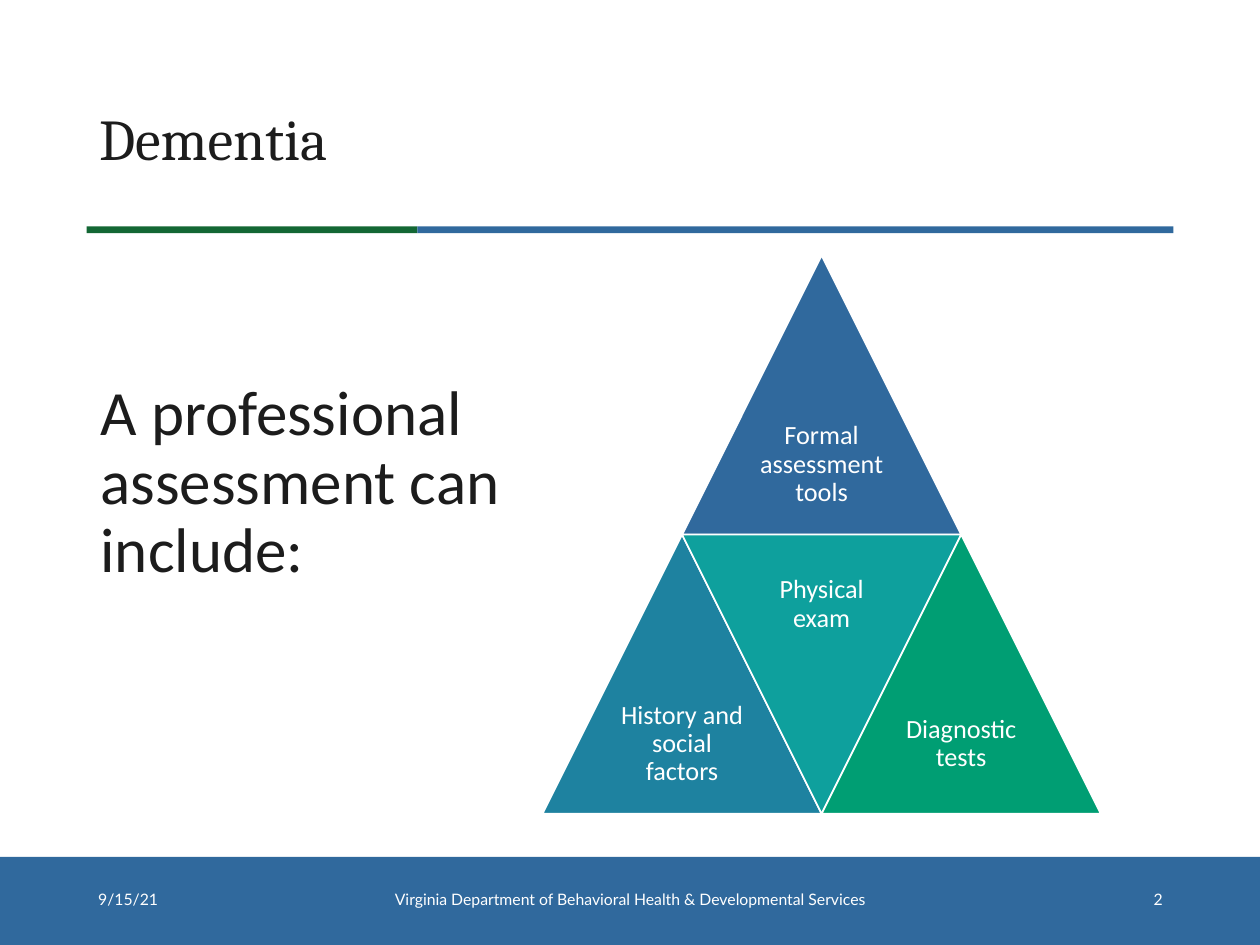
"""Builds a slide on what a professional dementia assessment can include."""
from pptx import Presentation
from pptx.dml.color import RGBColor
from pptx.enum.shapes import MSO_SHAPE
from pptx.enum.text import MSO_ANCHOR, PP_ALIGN
from pptx.util import Pt


def add_block(kind, left, top, width, height, color):
    block = page.shapes.add_shape(kind, Pt(left), Pt(top), Pt(width), Pt(height))
    block.shadow.inherit = False
    block.fill.solid()
    block.fill.fore_color.rgb = RGBColor.from_string(color)
    block.line.fill.background()
    return block


def write_text(box, text, size, font, color, align=PP_ALIGN.LEFT, anchor=MSO_ANCHOR.MIDDLE):
    frame = box.text_frame
    frame.word_wrap = True
    frame.vertical_anchor = anchor
    frame.text = text
    paragraph = frame.paragraphs[0]
    paragraph.alignment = align
    paragraph.line_spacing = 0.9
    span = paragraph.runs[0]
    span.font.size = Pt(size)
    span.font.name = font
    span.font.color.rgb = RGBColor.from_string(color)


WHITE, INK, BLUE, GREEN = "FFFFFF", "1C1C1C", "30699D", "136734"

deck = Presentation()
deck.slide_width, deck.slide_height = Pt(720), Pt(540)
page = deck.slides.add_slide(deck.slide_layouts[5])

title = page.shapes.title
title.left, title.top, title.width, title.height = Pt(49.5), Pt(29), Pt(621), Pt(104)
write_text(title, "Dementia", 33, "Cambria", INK)

add_block(MSO_SHAPE.RECTANGLE, 0, 489.6, 720, 50.4, BLUE)
add_block(MSO_SHAPE.RECTANGLE, 49.5, 129.4, 189, 3.8, GREEN)
add_block(MSO_SHAPE.RECTANGLE, 238.5, 129.4, 432, 3.8, BLUE)

footers = [
    ("9/15/21", 49, 163, PP_ALIGN.LEFT),
    ("Virginia Department of Behavioral Health & Developmental Services", 211.5, 297, PP_ALIGN.CENTER),
    ("2", 508.5, 163, PP_ALIGN.RIGHT),
]
for text, left, width, align in footers:
    box = page.shapes.add_textbox(Pt(left), Pt(499.5), Pt(width), Pt(29.5))
    write_text(box, text, 9, "Lato", WHITE, align)

lead = page.shapes.add_textbox(Pt(50.4), Pt(214.5), Pt(316), Pt(273.5))
write_text(lead, "A professional assessment can include:", 36, "Calibri", INK, anchor=MSO_ANCHOR.TOP)

side = 159.5
pyramid_left, pyramid_top = 310, 146
triangles = [
    ("Formal assessment tools", 1, 0, 0, BLUE),
    ("History and social factors", 0, 1, 0, "1E82A0"),
    ("Physical exam", 1, 1, 180, "0EA09D"),
    ("Diagnostic tests", 2, 1, 0, "009E73"),
]
for text, half_steps, row, rotation, color in triangles:
    left = pyramid_left + half_steps * side / 2
    top = pyramid_top + row * side
    triangle = add_block(MSO_SHAPE.ISOSCELES_TRIANGLE, left, top, side, side, color)
    triangle.rotation = rotation
    triangle.line.color.rgb = RGBColor.from_string(WHITE)
    triangle.line.width = Pt(1)
    label_top = top if rotation else top + side / 2
    label = page.shapes.add_textbox(Pt(left + side / 4), Pt(label_top), Pt(side / 2), Pt(side / 2))
    frame = label.text_frame
    frame.margin_left = frame.margin_right = frame.margin_top = frame.margin_bottom = Pt(4.5)
    write_text(label, text, 15, "Calibri", WHITE, PP_ALIGN.CENTER)

deck.save("out.pptx")
